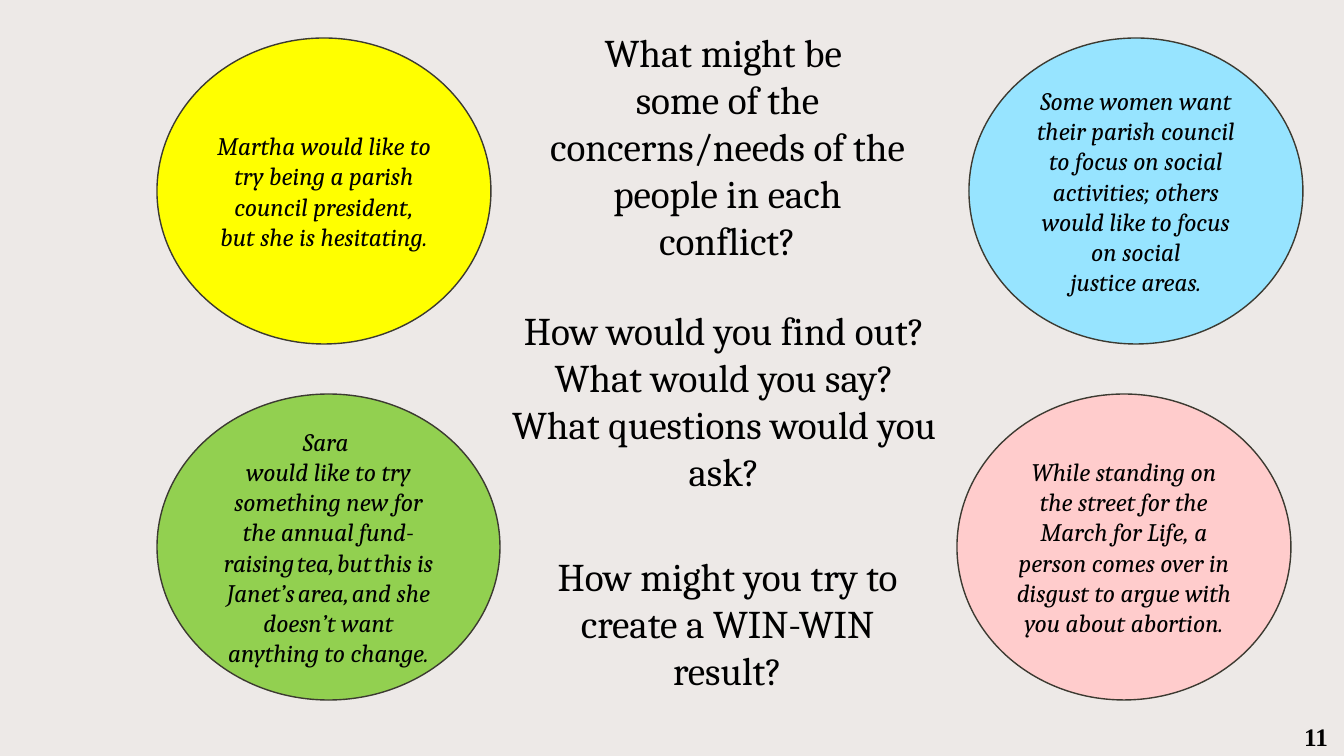
from pptx import Presentation, util as u
from pptx.dml.color import RGBColor
from pptx.enum import shapes, text

PX = 914400 / 100.8
COLORS = {
    "background": "EDE9E7", "ink": "000000", "outline": "3C3A31",
    "yellow": "FFFF00", "green": "92D050", "blue": "97E4FF", "pink": "FFCCCC",
}


def px(*lengths):
    return [u.Emu(round(length * PX)) for length in lengths]


def write(frame, paragraphs, anchor, **font_format):
    """Each paragraph is a list of (words, size in points) runs."""
    frame.word_wrap = True
    frame.vertical_anchor = anchor
    for index, runs in enumerate(paragraphs):
        paragraph = frame.add_paragraph() if index else frame.paragraphs[0]
        paragraph.alignment = text.PP_ALIGN.CENTER
        for words, size in runs:
            run = paragraph.add_run()
            run.text = words
            run.font.size = u.Pt(size)
            run.font.color.rgb = RGBColor.from_string(COLORS["ink"])
            for attribute, value in font_format.items():
                setattr(run.font, attribute, value)


deck = Presentation()
deck.slide_width, deck.slide_height = px(1344, 756)
slide = deck.slides.add_slide(deck.slide_layouts[6])
slide.background.fill.solid()
slide.background.fill.fore_color.rgb = RGBColor.from_string(COLORS["background"])

# Conflict situations in the four circles
situations = [
    (157, 38, 334, "yellow", [
        [("Martha would like to try being a parish council president, "
          "but she is hesitating.", 18)]]),
    (157, 394, 343, "green", [
        [("Sara ", 18)],
        [("would like to try something new for the annual fund-raising", 18),
         (" ", 9), ("tea,", 18), (" ", 9), ("but", 18), (" ", 9),
         ("this is Janet’s", 18), (" ", 10), ("area,", 18), (" ", 9),
         ("and she doesn’t want anything to change.", 18)]]),
    (969, 38, 334, "blue", [
        [("Some women want their parish council to focus on social activities; "
          "others would like to focus on social", 18)],
        [("justice areas.", 18)]]),
    (957, 394, 334, "pink", [
        [("While standing on the street for the March for Life, a person comes "
          "over in disgust to argue with you about abortion.", 18)]]),
]
for left, top, width, color, paragraphs in situations:
    circle = slide.shapes.add_shape(
        shapes.MSO_SHAPE.OVAL, *px(left, top, width, 306))
    circle.shadow.inherit = False
    circle.fill.solid()
    circle.fill.fore_color.rgb = RGBColor.from_string(COLORS[color])
    circle.line.color.rgb = RGBColor.from_string(COLORS["outline"])
    circle.line.width = u.Pt(1)
    write(circle.text_frame, paragraphs, text.MSO_ANCHOR.MIDDLE,
          name="Cambria", italic=True)

# Questions down the middle
questions = [
    (534, 23, 387, 248, ["What might be ",
                         "some of the concerns/needs of the people in each conflict?"]),
    (480, 301, 488, 201, ["How would you find out? What would you say?",
                          "What questions would you ask?"]),
    (534, 547, 387, 152, ["How might you try to create a WIN-WIN result?"]),
]
for *place, lines in questions:
    question = slide.shapes.add_textbox(*px(*place))
    write(question.text_frame, [[(line, 28)] for line in lines],
          text.MSO_ANCHOR.TOP, name="Cambria")
    question.text_frame.auto_size = text.MSO_AUTO_SIZE.SHAPE_TO_FIT_TEXT

# Page number
page_number = slide.shapes.add_textbox(*px(1289, 716, 54, 40))
write(page_number.text_frame, [[("11", 18)]], text.MSO_ANCHOR.MIDDLE,
      name="Times New Roman", bold=True)

deck.save("out.pptx")
